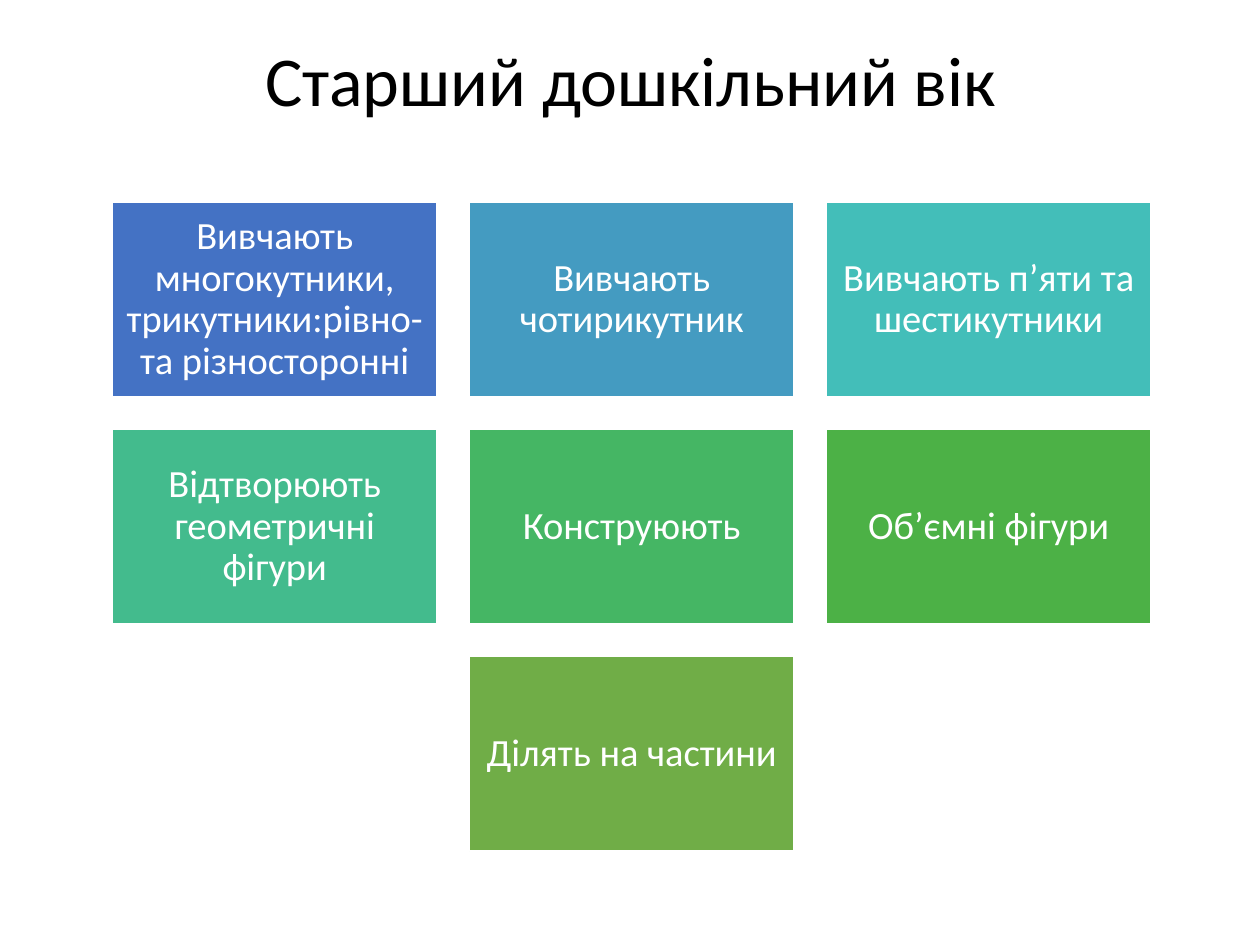
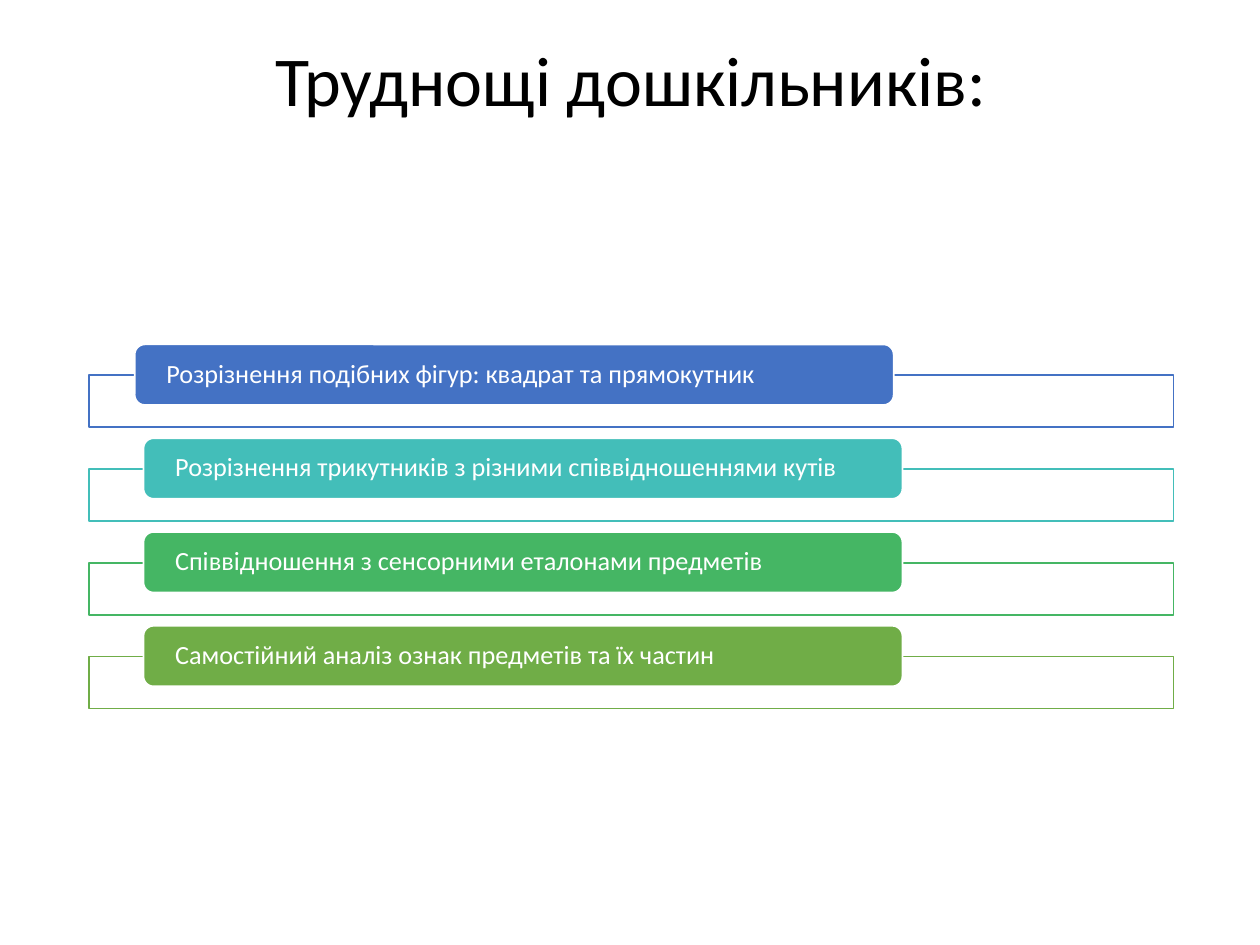
from pptx import Presentation
from pptx import util as u
from pptx.dml.color import RGBColor
from pptx.enum import shapes, text

FONT = "Calibri"
WHITE, BLACK = "FFFFFF", "000000"
BLUE, TEAL, GREEN, OLIVE = "4472C4", "43BEB9", "45B664", "70AD47"

SKILLS_TITLE = "Старший дошкільний вік"
SKILLS = [
    ("Вивчають многокутники, трикутники:рівно- та різносторонні", BLUE),
    ("Вивчають чотирикутник", "449BC1"),
    ("Вивчають п’яти та шестикутники", TEAL),
    ("Відтворюють геометричні фігури", "43BB8D"),
    ("Конструюють", GREEN),
    ("Об’ємні фігури", "4CB146"),
    ("Ділять на частини", OLIVE),
]
DIFFICULTIES_TITLE = "Труднощі дошкільників:"
DIFFICULTIES = [
    ("Розрізнення подібних фігур: квадрат та прямокутник", BLUE, 77),
    ("Розрізнення трикутників з різними співвідношеннями кутів", TEAL, 82),
    ("Співвідношення з сенсорними еталонами предметів", GREEN, 82),
    ("Самостійний аналіз ознак предметів та їх частин", OLIVE, 82),
]

SLIDE_WIDTH, SLIDE_HEIGHT = 720, 540
TITLE_AREA = (51.84, 9.36, 617.04, 77.04)
COLUMNS, TILE_WIDTH, TILE_HEIGHT, TILE_GAP = 3, 185.5, 111.3, 18.5
TILES_CENTER, TILES_TOP = 361, 115.5
FRAME_LEFT, FRAME_TOP, FRAME_WIDTH, FRAME_HEIGHT = 51, 214.4, 619.6, 29.7
LABEL_TOP, LABEL_WIDTH, LABEL_HEIGHT = 196.8, 433.7, 34.6
ROW_PITCH = 53.6


def rgb(value):
    return RGBColor.from_string(value)


def set_all(target, values):
    for name, value in values.items():
        setattr(target, name, value)


def write(box, words, size, color, align, inset_x, inset_y):
    frame = box.text_frame
    set_all(frame, {
        "word_wrap": True,
        "vertical_anchor": text.MSO_ANCHOR.MIDDLE,
        "margin_left": u.Pt(inset_x), "margin_right": u.Pt(inset_x),
        "margin_top": u.Pt(inset_y), "margin_bottom": u.Pt(inset_y),
    })
    para = frame.paragraphs[0]
    set_all(para, {"alignment": align, "line_spacing": 0.9})
    span = para.add_run()
    span.text = words
    set_all(span.font, {"name": FONT, "size": u.Pt(size)})
    span.font.color.rgb = rgb(color)


def add_block(page, kind, area, fill, line):
    box = page.shapes.add_shape(kind, *map(u.Pt, area))
    box.shadow.inherit = False
    box.fill.solid()
    box.fill.fore_color.rgb = rgb(fill)
    box.line.color.rgb = rgb(line)
    box.line.width = u.Pt(1)
    return box


def add_page(deck, title):
    page = deck.slides.add_slide(deck.slide_layouts[6])
    box = page.shapes.add_textbox(*map(u.Pt, TITLE_AREA))
    write(box, title, 40, BLACK, text.PP_ALIGN.CENTER, 7.2, 3.6)
    return page


def build_skills(deck):
    page = add_page(deck, SKILLS_TITLE)
    for start in range(0, len(SKILLS), COLUMNS):
        row = SKILLS[start:start + COLUMNS]
        row_width = len(row) * (TILE_WIDTH + TILE_GAP) - TILE_GAP
        left = TILES_CENTER - row_width / 2
        top = TILES_TOP + start // COLUMNS * (TILE_HEIGHT + TILE_GAP)
        for column, (words, color) in enumerate(row):
            area = (left + column * (TILE_WIDTH + TILE_GAP), top, TILE_WIDTH, TILE_HEIGHT)
            tile = add_block(page, shapes.MSO_SHAPE.RECTANGLE, area, color, WHITE)
            write(tile, words, 22, WHITE, text.PP_ALIGN.CENTER, 6.6, 6.6)


def build_difficulties(deck):
    page = add_page(deck, DIFFICULTIES_TITLE)
    for row, (words, color, left) in enumerate(DIFFICULTIES):
        shift = row * ROW_PITCH
        frame_area = (FRAME_LEFT, FRAME_TOP + shift, FRAME_WIDTH, FRAME_HEIGHT)
        add_block(page, shapes.MSO_SHAPE.RECTANGLE, frame_area, WHITE, color)
        label_area = (left, LABEL_TOP + shift, LABEL_WIDTH, LABEL_HEIGHT)
        label = add_block(page, shapes.MSO_SHAPE.ROUNDED_RECTANGLE, label_area, color, WHITE)
        write(label, words, 15, WHITE, text.PP_ALIGN.LEFT, 16.4, 0)


def main():
    deck = Presentation()
    set_all(deck, {"slide_width": u.Pt(SLIDE_WIDTH), "slide_height": u.Pt(SLIDE_HEIGHT)})
    build_skills(deck)
    build_difficulties(deck)
    deck.save("out.pptx")


if __name__ == "__main__":
    main()
